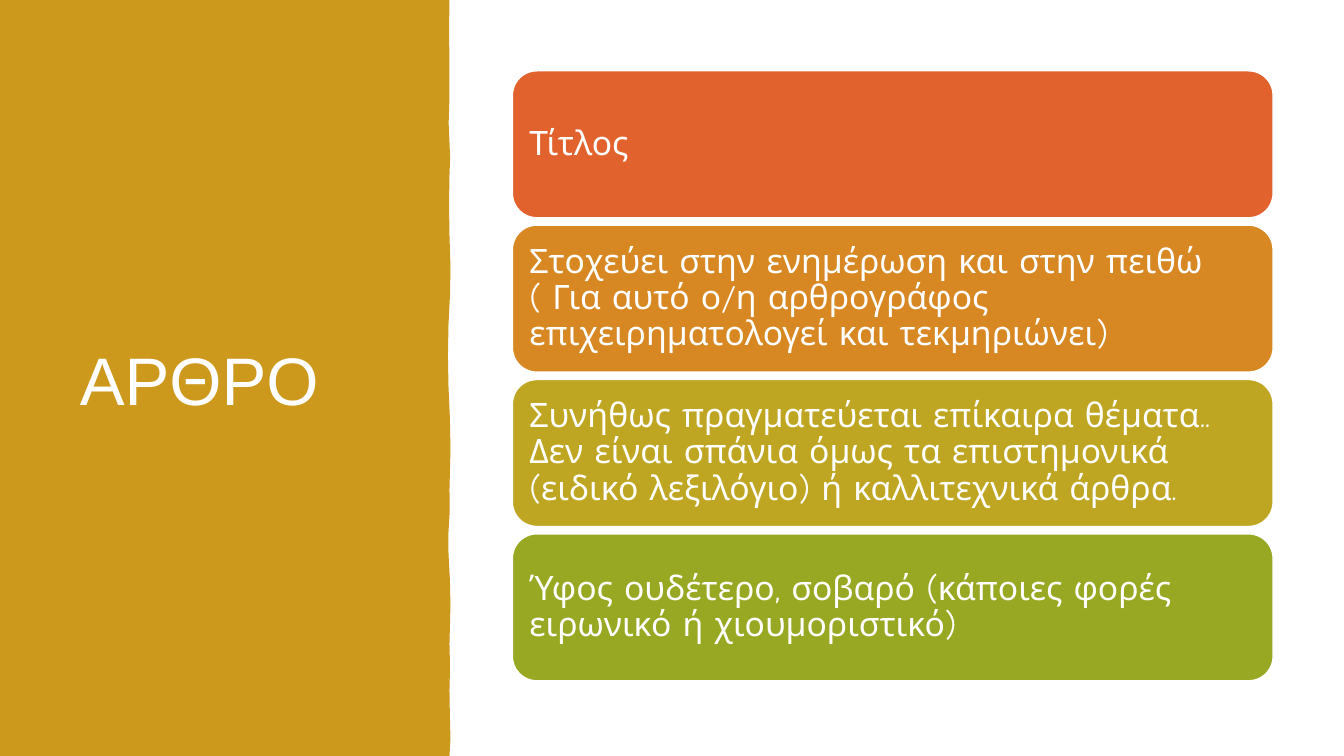
from dataclasses import dataclass

from pptx import Presentation
from pptx.dml.color import RGBColor
from pptx.enum.shapes import MSO_SHAPE
from pptx.enum.text import MSO_ANCHOR, PP_ALIGN
from pptx.util import Pt

ROUND = MSO_SHAPE.ROUNDED_RECTANGLE
MIDDLE = MSO_ANCHOR.MIDDLE
LEFT = PP_ALIGN.LEFT

WIDTH, HEIGHT = 960, 540
CARD_TOP, CARD_STEP = 50.6, 110.25
EDGE = [
    (321.1, 0), (320.8, 22), (321.1, 45), (321, 73), (320.5, 88),
    (321.1, 101.5), (321.6, 113), (321.1, 125), (320.8, 146),
    (321.1, 168), (321.8, 190), (321.5, 210), (320.4, 232),
    (320, 254), (320.4, 276), (321.4, 298), (321.8, 321),
    (321.1, 350), (321.3, 365), (320.4, 380), (320.4, 395),
    (321.4, 414), (321.8, 432), (321.1, 460), (321.5, 476),
    (321.1, 493), (321.4, 511), (321.8, 528), (321.1, HEIGHT),
]
CARDS = [
    ("Τίτλος", "E2622E"),
    ("Στοχεύει στην ενημέρωση και στην πειθώ ( Για αυτό ο/η αρθρογράφος "
     "επιχειρηματολογεί και τεκμηριώνει)", "D78822"),
    ("Συνήθως πραγματεύεται επίκαιρα θέματα.. Δεν είναι σπάνια όμως τα "
     "επιστημονικά (ειδικό λεξιλόγιο) ή καλλιτεχνικά άρθρα.", "BFA622"),
    ("Ύφος ουδέτερο, σοβαρό (κάποιες φορές ειρωνικό ή χιουμοριστικό)",
     "98A822"),
]


@dataclass(frozen=True)
class Theme:
    """Colours, fonts and type sizes of the slide."""
    panel: str = "CD991C"
    light: str = "FFFFFF"
    head_font: str = "Arial"
    body_font: str = "Comic Neue"
    head_size: int = 48
    body_size: int = 24


class Painter:
    """Draws styled elements on one slide."""

    def __init__(self, slide, theme):
        self.shapes = slide.shapes
        self.theme = theme

    def paint(self, shape, color):
        """Give a shape a flat fill without shadow."""
        shape.shadow.inherit = False
        shape.fill.solid()
        shape.fill.fore_color.rgb = RGBColor.from_string(color)

    def label(self, shape, text, font, size):
        """Set one left-aligned, vertically centred paragraph."""
        frame = shape.text_frame
        frame.word_wrap = True
        frame.vertical_anchor = MIDDLE
        para = frame.paragraphs[0]
        para.text = text
        para.alignment = LEFT
        para.font.name = font
        para.font.size = Pt(size)
        para.font.color.rgb = RGBColor.from_string(self.theme.light)
        return para

    def panel(self, edge):
        """Draw the left panel with its uneven right edge."""
        points = [(Pt(x), Pt(y)) for x, y in [*edge, (0, HEIGHT)]]
        outline = self.shapes.build_freeform(0, 0)
        outline.add_line_segments(points, close=True)
        shape = outline.convert_to_shape()
        self.paint(shape, self.theme.panel)
        shape.line.fill.background()

    def title(self, text, left, top, width, height):
        """Place the slide heading."""
        box = self.shapes.add_textbox(Pt(left), Pt(top), Pt(width), Pt(height))
        self.label(box, text, self.theme.head_font, self.theme.head_size)

    def card(self, text, color, left, top, width, height):
        """Draw a rounded card with its text."""
        shape = self.shapes.add_shape(
            ROUND, Pt(left), Pt(top), Pt(width), Pt(height))
        self.paint(shape, color)
        shape.line.color.rgb = RGBColor.from_string(self.theme.light)
        shape.line.width = Pt(1)
        frame = shape.text_frame
        frame.margin_left = frame.margin_right = Pt(7.2)
        frame.margin_top = frame.margin_bottom = Pt(7.2)
        size = self.theme.body_size
        para = self.label(shape, text, self.theme.body_font, size)
        para.line_spacing = 0.9
        para.space_after = Pt(0.35 * size)


def main():
    """Build and save the slide."""
    deck = Presentation()
    deck.slide_width, deck.slide_height = Pt(WIDTH), Pt(HEIGHT)
    slide = deck.slides.add_slide(deck.slide_layouts[6])
    painter = Painter(slide, Theme())
    painter.panel(EDGE)
    painter.title("ΑΡΘΡΟ", 50, 50.4, 244, 440)
    for row, (text, color) in enumerate(CARDS):
        painter.card(text, color, 366, CARD_TOP + row * CARD_STEP, 543.4, 105)
    deck.save("out.pptx")


if __name__ == "__main__":
    main()
